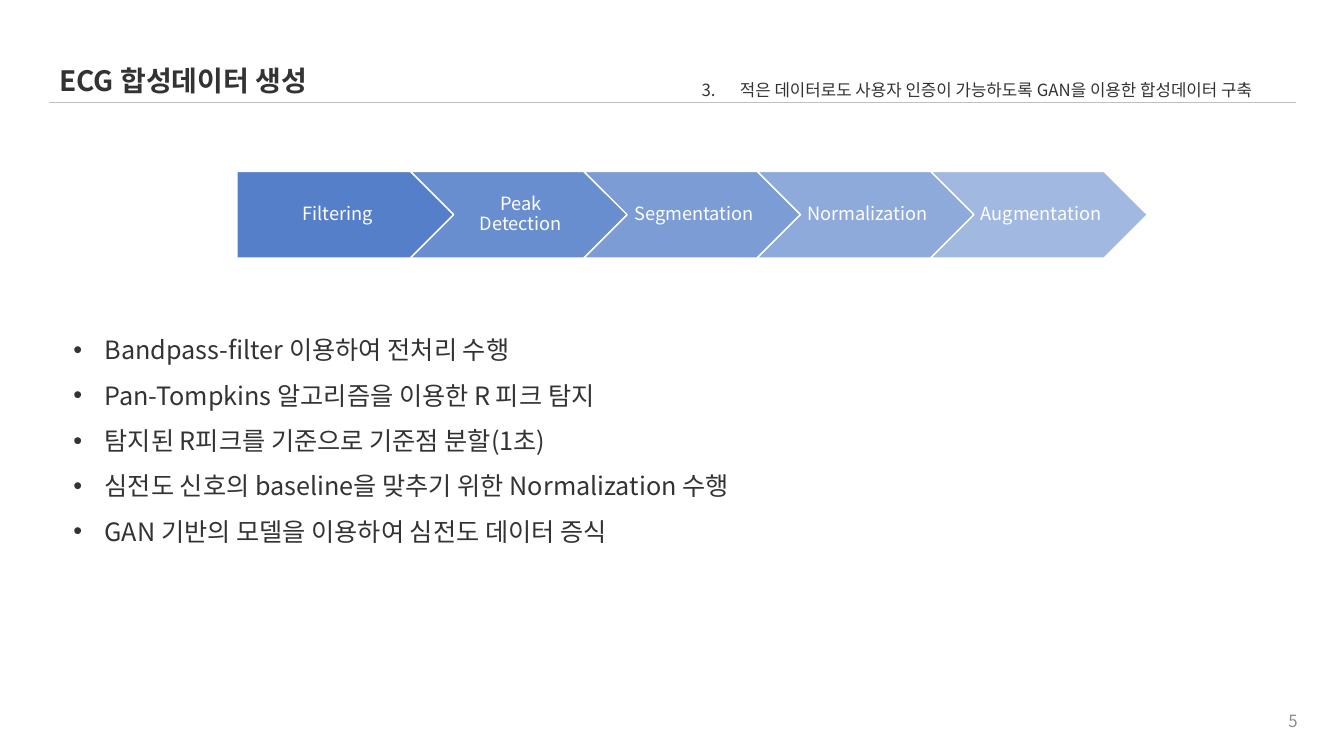
from lxml.etree import SubElement
from pptx import Presentation
from pptx.dml.color import RGBColor
from pptx.enum.shapes import MSO_CONNECTOR, MSO_SHAPE as Preset
from pptx.enum.text import MSO_ANCHOR as Anchor, MSO_AUTO_SIZE as AutoSize, PP_ALIGN as Align
from pptx.oxml.ns import qn
from pptx.util import Inches, Pt

FONT = "Noto Sans CJK KR"
INK = RGBColor(0x33, 0x33, 0x33)
GREY = RGBColor(0x8C, 0x8C, 0x8C)
RULE = RGBColor(0xBF, 0xBF, 0xBF)
BLUE = RGBColor(0x44, 0x72, 0xC4)
WHITE = RGBColor(0xFF, 0xFF, 0xFF)

STEPS = ["Filtering", "Peak Detection", "Segmentation", "Normalization", "Augmentation"]
STEP_LEFT, STEP_TOP, STEP_PITCH = 2.35, 1.7, 1.72
STEP_WIDTH, STEP_HEIGHT = 2.15, 0.86
STEP_POINT = STEP_HEIGHT / 2

DETAILS = [
    "Bandpass-filter 이용하여 전처리 수행",
    "Pan-Tompkins 알고리즘을 이용한 R 피크 탐지",
    "탐지된 R피크를 기준으로 기준점 분할(1초)",
    "심전도 신호의 baseline을 맞추기 위한 Normalization 수행",
    "GAN 기반의 모델을 이용하여 심전도 데이터 증식",
]


def style_paragraph(paragraph, size, color, bold=False, align=Align.LEFT, spacing=None):
    paragraph.alignment = align
    if spacing:
        paragraph.line_spacing = spacing
    font = paragraph.font
    font.size, font.bold, font.name = Pt(size), bold, FONT
    font.color.rgb = color
    # Hangul takes the East Asian typeface
    defaults = paragraph._p.pPr.find(qn("a:defRPr"))
    SubElement(defaults, qn("a:ea"), typeface=FONT)


def add_bullet(paragraph, indent, tag, **settings):
    properties = paragraph._p.get_or_add_pPr()
    properties.set("marL", str(Inches(indent)))
    properties.set("indent", str(-Inches(indent)))
    SubElement(properties, qn("a:buFont"), typeface="Arial" if tag == "a:buChar" else FONT)
    SubElement(properties, qn(tag), **settings)


def add_text(shapes, box, lines, size, color, bullet=None, wrap=True,
             anchor=Anchor.TOP, grow=False, insets=None, **style):
    frame = shapes.add_textbox(*map(Inches, box)).text_frame
    frame.word_wrap = wrap
    frame.vertical_anchor = anchor
    frame.auto_size = AutoSize.SHAPE_TO_FIT_TEXT if grow else AutoSize.NONE
    if insets:
        (frame.margin_left, frame.margin_top,
         frame.margin_right, frame.margin_bottom) = map(Inches, insets)
    frame.text = "\n".join(lines)
    for paragraph in frame.paragraphs:
        if bullet:
            add_bullet(paragraph, **bullet)
        style_paragraph(paragraph, size, color, **style)


def add_rule(shapes, left, right, y):
    rule = shapes.add_connector(
        MSO_CONNECTOR.STRAIGHT, Inches(left), Inches(y), Inches(right), Inches(y))
    rule.line.color.rgb = RULE
    rule.line.width = Pt(0.5)
    SubElement(rule._element.spPr, qn("a:effectLst"))


def add_step(shapes, index, name):
    first = index == 0
    left = STEP_LEFT + index * STEP_PITCH
    arrow = shapes.add_shape(
        Preset.PENTAGON if first else Preset.CHEVRON,
        Inches(left), Inches(STEP_TOP), Inches(STEP_WIDTH), Inches(STEP_HEIGHT))
    arrow.shadow.inherit = False
    arrow.fill.solid()
    arrow.fill.fore_color.rgb = BLUE
    arrow.line.color.rgb = WHITE
    arrow.line.width = Pt(1)
    # Each step is 10% more transparent than the one before
    fill_color = arrow._element.spPr.find(qn("a:solidFill")).find(qn("a:srgbClr"))
    SubElement(fill_color, qn("a:alpha"), val=str(90000 - index * 10000))

    label_left = left if first else left + STEP_POINT
    label_width = STEP_WIDTH - STEP_POINT * (0.5 if first else 2)
    add_text(shapes, (label_left, STEP_TOP, label_width, STEP_HEIGHT), [name], 13, WHITE,
             anchor=Anchor.MIDDLE, insets=(0.08 if first else 0.06, 0.04, 0.02, 0.04),
             align=Align.CENTER, spacing=0.9)


def main():
    deck = Presentation()
    deck.slide_width, deck.slide_height = Inches(13.33), Inches(7.5)
    shapes = deck.slides.add_slide(deck.slide_layouts[6]).shapes

    # Page number
    add_text(shapes, (9.97, 6.95, 3, 0.4), ["5"], 12, GREY,
             anchor=Anchor.MIDDLE, align=Align.RIGHT)

    # Heading
    add_rule(shapes, 0.49, 12.85, 1.02)
    add_text(shapes, (0.49, 0.58, 2.84, 0.44), ["ECG 합성데이터 생성"], 20, INK,
             wrap=False, grow=True, bold=True)
    add_text(shapes, (6.86, 0.64, 6.21, 0.36),
             ["적은 데이터로도 사용자 인증이 가능하도록 GAN을 이용한 합성데이터 구축"], 12, INK,
             bullet=dict(indent=0.38, tag="a:buAutoNum", type="arabicPeriod", startAt="3"),
             grow=True, spacing=1.5)

    # Process arrows
    process = shapes.add_group_shape()
    for index, name in enumerate(STEPS):
        add_step(process.shapes, index, name)

    # Step details
    add_text(shapes, (0.63, 3.12, 12.22, 2.31), DETAILS, 18, INK,
             bullet=dict(indent=0.31, tag="a:buChar", char="•"), grow=True, spacing=1.5)

    deck.save("out.pptx")


if __name__ == "__main__":
    main()
